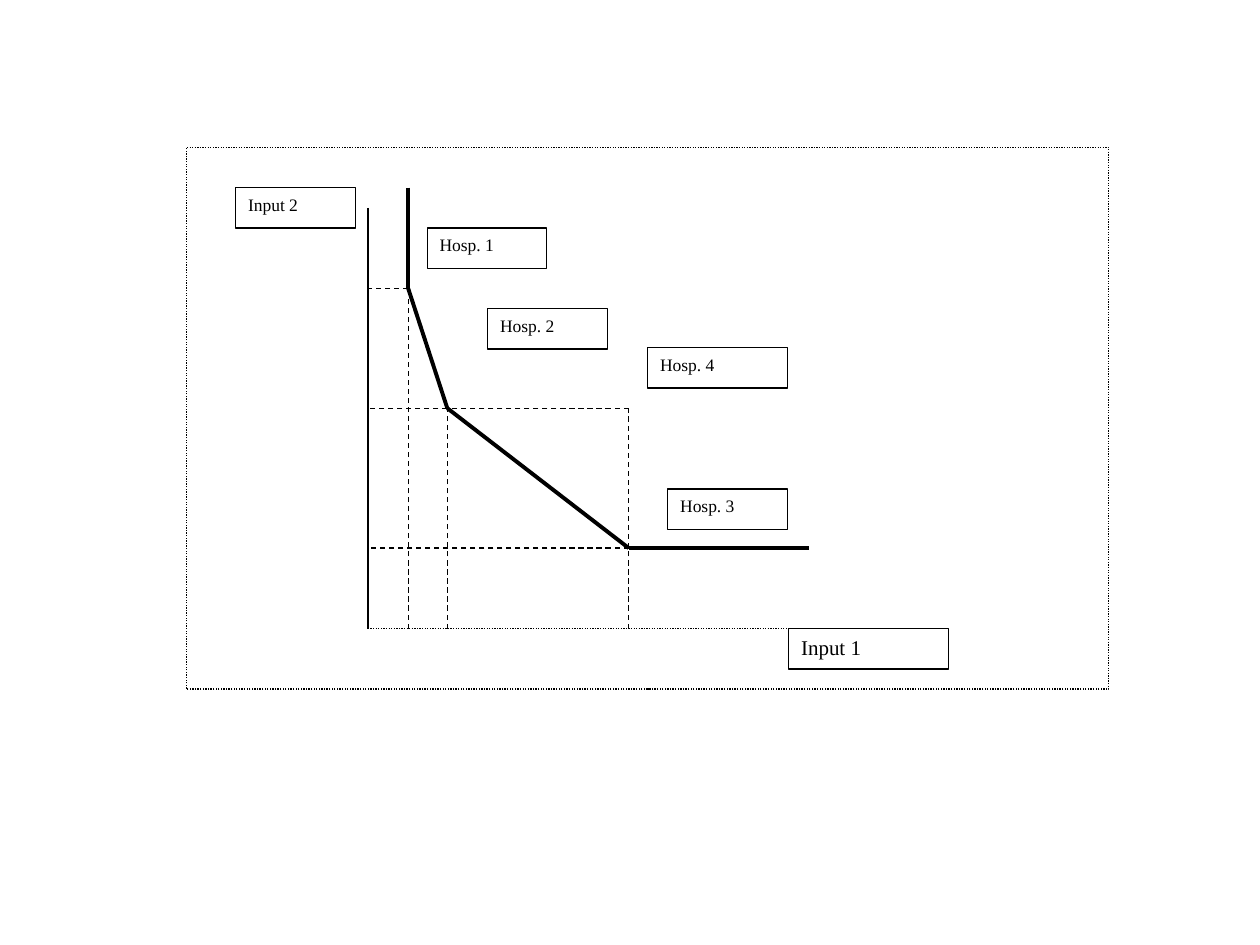
from itertools import pairwise

from lxml import etree
from pptx import Presentation
from pptx.dml.color import RGBColor
from pptx.enum.dml import MSO_LINE
from pptx.enum.shapes import MSO_CONNECTOR, MSO_SHAPE
from pptx.enum.text import MSO_ANCHOR, PP_ALIGN
from pptx.oxml.ns import qn
from pptx.util import Inches, Pt

RECTANGLE = MSO_SHAPE.RECTANGLE
STRAIGHT = MSO_CONNECTOR.STRAIGHT
DOTTED = MSO_LINE.ROUND_DOT
DASHED = MSO_LINE.DASH
LEFT = PP_ALIGN.LEFT
TOP = MSO_ANCHOR.TOP

COLORS = {"ink": "000000", "paper": "FFFFFF"}
FONT = "Times New Roman"
THIN, THICK = 0.75, 2.25

DIAGRAM_BOX = (1.48, 1.17, 7.32, 4.3)
ORIGIN = (1.44, 3.82)
AXIS_TOP = 0.48
AXIS_RIGHT = 5.42
HOSPITALS = [(1.76, 1.12), (2.07, 2.07), (3.51, 3.18)]
FRONTIER = [(1.76, 0.32), *HOSPITALS, (4.94, 3.18)]
LABEL_HEIGHT = 0.32
LABELS = [
    ("Hosp. 1", 1.91, 0.64, 0.95, 10),
    ("Hosp. 2", 2.39, 1.28, 0.95, 10),
    ("Hosp. 3", 3.82, 2.71, 0.95, 10),
    ("Hosp. 4", 3.66, 1.59, 1.11, 10),
    ("Input 1", 4.78, 3.82, 1.27, 12),
    ("Input 2", 0.39, 0.32, 0.95, 10),
]


def color(name):
    return RGBColor.from_string(COLORS[name])


def style_line(line, width, dash=None):
    line.color.rgb = color("ink")
    line.width = Pt(width)
    if dash:
        line.dash_style = dash


def add_line(page, box, start, end, width=THIN, dash=None):
    left, top = box[:2]
    connector = page.shapes.add_connector(
        STRAIGHT,
        Inches(left + start[0]), Inches(top + start[1]),
        Inches(left + end[0]), Inches(top + end[1]),
    )
    style_line(connector.line, width, dash)
    properties = connector._element.find(qn("p:spPr"))
    etree.SubElement(properties, qn("a:effectLst"))


def add_rectangle(page, left, top, width, height, dash=None):
    rectangle = page.shapes.add_shape(
        RECTANGLE, Inches(left), Inches(top), Inches(width), Inches(height)
    )
    rectangle.shadow.inherit = False
    style_line(rectangle.line, THIN, dash)
    return rectangle


def add_frame(page, box):
    add_rectangle(page, *box, dash=DOTTED).fill.background()


def add_axes(page, box):
    add_line(page, box, (ORIGIN[0], AXIS_TOP), ORIGIN)
    add_line(page, box, ORIGIN, (AXIS_RIGHT, ORIGIN[1]), dash=DOTTED)


def add_guides(page, box):
    for x, y in HOSPITALS:
        add_line(page, box, (x, ORIGIN[1]), (x, y), dash=DASHED)
        add_line(page, box, (x, y), (ORIGIN[0], y), dash=DASHED)
    second, third = HOSPITALS[1:]
    fourth = (third[0], second[1])
    add_line(page, box, third, fourth, dash=DASHED)
    add_line(page, box, fourth, second, dash=DASHED)


def add_frontier(page, box):
    for start, end in pairwise(FRONTIER):
        add_line(page, box, start, end, width=THICK)


def add_label(page, box, text, x, y, width, size):
    label = add_rectangle(page, box[0] + x, box[1] + y, width, LABEL_HEIGHT)
    label.fill.solid()
    label.fill.fore_color.rgb = color("paper")
    frame = label.text_frame
    frame.text = text
    frame.word_wrap = True
    frame.vertical_anchor = TOP
    para = frame.paragraphs[0]
    para.alignment = LEFT
    span = para.runs[0]
    span.font.name = FONT
    span.font.size = Pt(size)
    span.font.color.rgb = color("ink")


def add_diagram(page, box):
    add_frame(page, box)
    add_axes(page, box)
    add_guides(page, box)
    add_frontier(page, box)
    for label in LABELS:
        add_label(page, box, *label)


def main():
    deck = Presentation()
    deck.slide_width = Inches(10)
    deck.slide_height = Inches(7.5)
    page = deck.slides.add_slide(deck.slide_layouts[6])
    add_diagram(page, DIAGRAM_BOX)
    deck.save("out.pptx")


if __name__ == "__main__":
    main()
